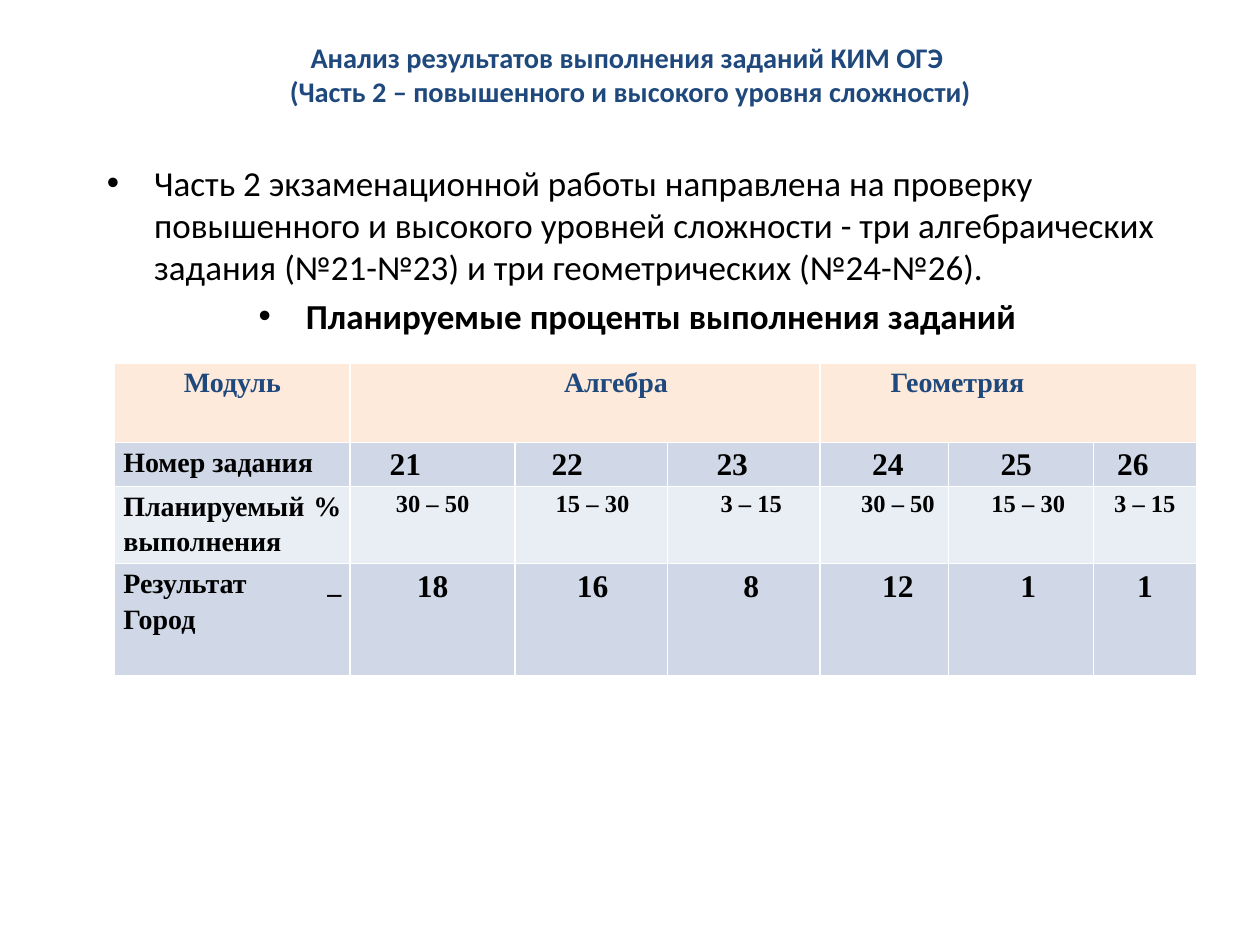
from pptx import Presentation
from pptx.dml.color import RGBColor
from pptx.enum.text import MSO_ANCHOR, PP_ALIGN
from pptx.oxml import parse_xml
from pptx.oxml.ns import nsdecls
from pptx.util import Pt

SANS, SERIF = "Calibri", "Times New Roman"
NAVY, BLACK, WHITE = "1F497D", "000000", "FFFFFF"
CENTER, JUSTIFY = PP_ALIGN.CENTER, PP_ALIGN.JUSTIFY

TITLE = ("Анализ результатов выполнения заданий КИМ ОГЭ \v"
         "(Часть 2 – повышенного и высокого уровня сложности)")
BODY = [
    ("Часть 2 экзаменационной работы направлена на проверку повышенного и "
     "высокого уровней сложности - три алгебраических задания (№21-№23) "
     "и три геометрических (№24-№26).", PP_ALIGN.LEFT, False),
    ("Планируемые проценты выполнения заданий", CENTER, True),
]

COLUMNS = [134.6, 94.3, 87.1, 87.1, 73.4, 82.8, 59]
HEADERS = [(0, 0, "Модуль", CENTER, 0),
           (1, 3, "Алгебра", CENTER, 35.4),
           (4, 6, "Геометрия", JUSTIFY, 35.4)]
VALUE_INDENTS = [0, 1.4, 8.6, 15.8, 8.6, 0]
ROWS = [
    ("Номер задания", ["21", "22", "23", "24", "25", "26"],
     18, JUSTIFY, [17.6, 15.8, 23, 24.8, 24.8, 8.6], "D0D8E8", 25.2),
    ("Планируемый % выполнения",
     ["30 – 50", "15 – 30", "3 – 15", "30 – 50", "15 – 30", "3 – 15"],
     14, CENTER, VALUE_INDENTS, "E9EDF4", 35.3),
    ("Результат _ Город", ["18", "16", "8", "12", "1", "1"],
     18, CENTER, VALUE_INDENTS, "D0D8E8", 64),
]
HEADER_FILL, HEADER_HEIGHT = "FDEADA", 45.4


def rgb(value):
    """Turn a hex string into a colour."""
    return RGBColor.from_string(value)


def add_run(p, text, font, size, color, bold):
    """Add one formatted run to a paragraph."""
    r = p.add_run()
    r.text = text
    r.font.name, r.font.size, r.font.bold = font, Pt(size), bold
    r.font.color.rgb = rgb(color)


def add_text_box(s, left, top, width, height):
    """Add a wrapping text box and return its frame."""
    tf = s.shapes.add_textbox(Pt(left), Pt(top), Pt(width), Pt(height)).text_frame
    tf.word_wrap = True
    return tf


def add_title(s):
    """Add the two-line heading."""
    tf = add_text_box(s, 49.7, 28.8, 620.6, 42.5)
    tf.vertical_anchor = MSO_ANCHOR.MIDDLE
    tf.margin_top, tf.margin_bottom = Pt(0), Pt(15)
    p = tf.paragraphs[0]
    p.alignment = CENTER
    first, second = TITLE.split("\v")
    add_run(p, first, SANS, 16.2, NAVY, True)
    p.add_line_break()
    add_run(p, second, SANS, 16.2, NAVY, True)


def add_body(s):
    """Add the bulleted paragraphs."""
    tf = add_text_box(s, 54, 88.6, 620.6, 362.9)
    for i, (text, align, bold) in enumerate(BODY):
        p = tf.add_paragraph() if i else tf.paragraphs[0]
        p.alignment, p.space_before = align, Pt(4)
        pPr = p._p.get_or_add_pPr()
        pPr.set("marL", str(Pt(27)))
        pPr.set("indent", str(-Pt(27)))
        pPr.append(parse_xml(f'<a:buFont {nsdecls("a")} typeface="Arial"/>'))
        pPr.append(parse_xml(f'<a:buChar {nsdecls("a")} char="•"/>'))
        add_run(p, text, SANS, 20, BLACK, bold)


def style_cell(cell, fill):
    """Set the margins, white borders and fill of a cell."""
    cell.margin_left = cell.margin_right = Pt(5)
    cell.margin_top = cell.margin_bottom = Pt(0)
    tcPr = cell._tc.get_or_add_tcPr()
    for side in "LRTB":
        tcPr.append(parse_xml(
            f'<a:ln{side} {nsdecls("a")} w="{Pt(1)}"><a:solidFill>'
            f'<a:srgbClr val="{WHITE}"/></a:solidFill></a:ln{side}>'))
    cell.fill.solid()
    cell.fill.fore_color.rgb = rgb(fill)


def write_cell(cell, text, size, color, align, indent=0):
    """Write one bold line of table text with a first-line indent."""
    p = cell.text_frame.paragraphs[0]
    p.alignment, p.line_spacing = align, 1.15
    p._p.get_or_add_pPr().set("indent", str(Pt(indent)))
    add_run(p, text, SERIF, size, color, True)


def add_results(s):
    """Add the table of planned and actual percentages."""
    heights = [HEADER_HEIGHT] + [row[-1] for row in ROWS]
    fills = [HEADER_FILL] + [row[-2] for row in ROWS]
    table = s.shapes.add_table(len(heights), len(COLUMNS), Pt(65.5), Pt(207.4),
                               Pt(sum(COLUMNS)), Pt(sum(heights))).table
    table.first_row = table.horz_banding = False
    for column, width in zip(table.columns, COLUMNS):
        column.width = Pt(width)
    for row, height, fill in zip(table.rows, heights, fills):
        row.height = Pt(height)
        for cell in row.cells:
            style_cell(cell, fill)
    for start, end, text, align, indent in HEADERS:
        cell = table.cell(0, start)
        if end > start:
            cell.merge(table.cell(0, end))
        write_cell(cell, text, 16, NAVY, align, indent)
    for i, (label, values, size, align, indents, _, _) in enumerate(ROWS, 1):
        write_cell(table.cell(i, 0), label, 16, BLACK, JUSTIFY)
        for j, (value, indent) in enumerate(zip(values, indents), 1):
            write_cell(table.cell(i, j), value, size, BLACK, align, indent)


def main():
    """Build the slide and save it."""
    prs = Presentation()
    prs.slide_width, prs.slide_height = Pt(720), Pt(540)
    s = prs.slides.add_slide(prs.slide_layouts[6])
    add_title(s)
    add_body(s)
    add_results(s)
    prs.save("out.pptx")


if __name__ == "__main__":
    main()
